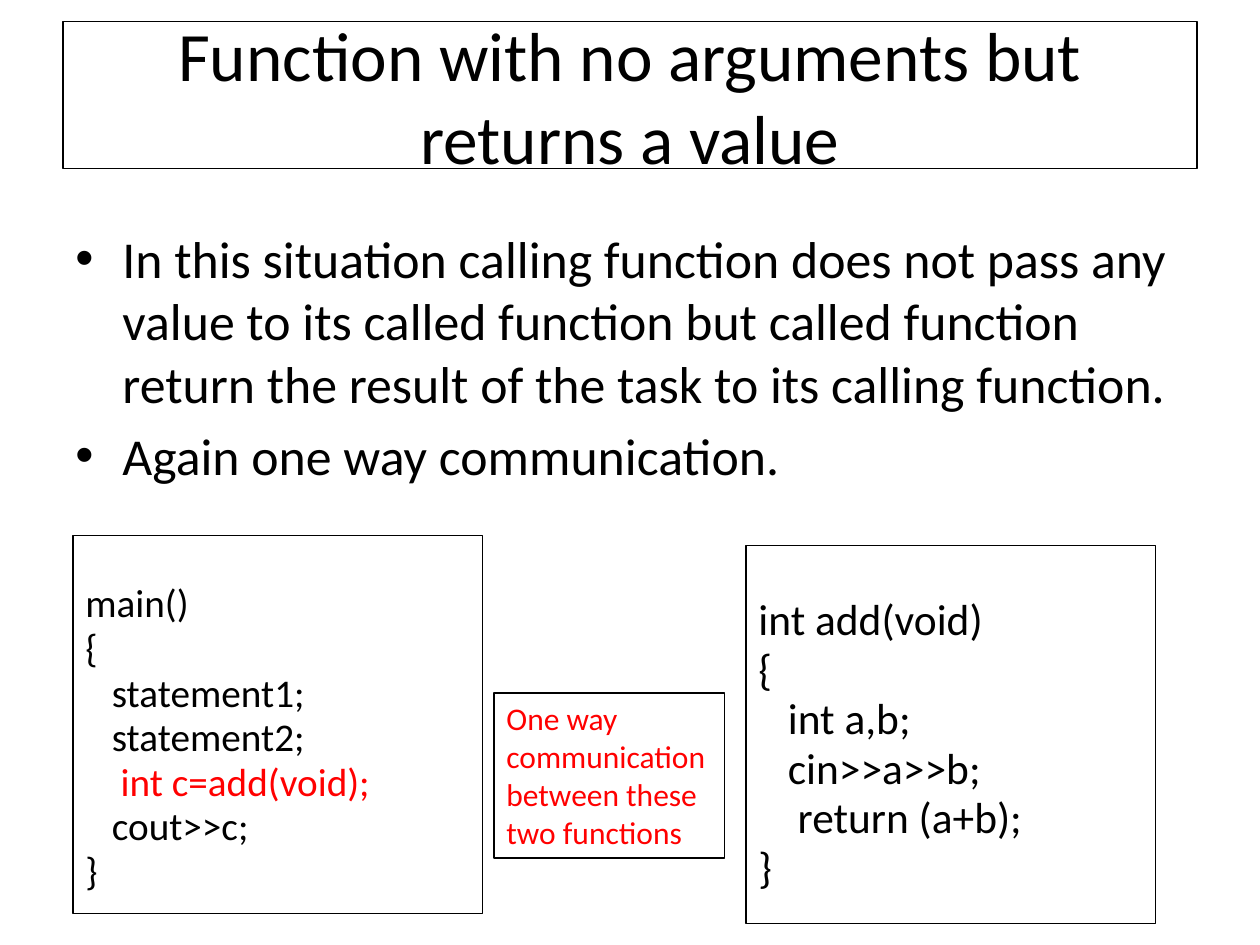
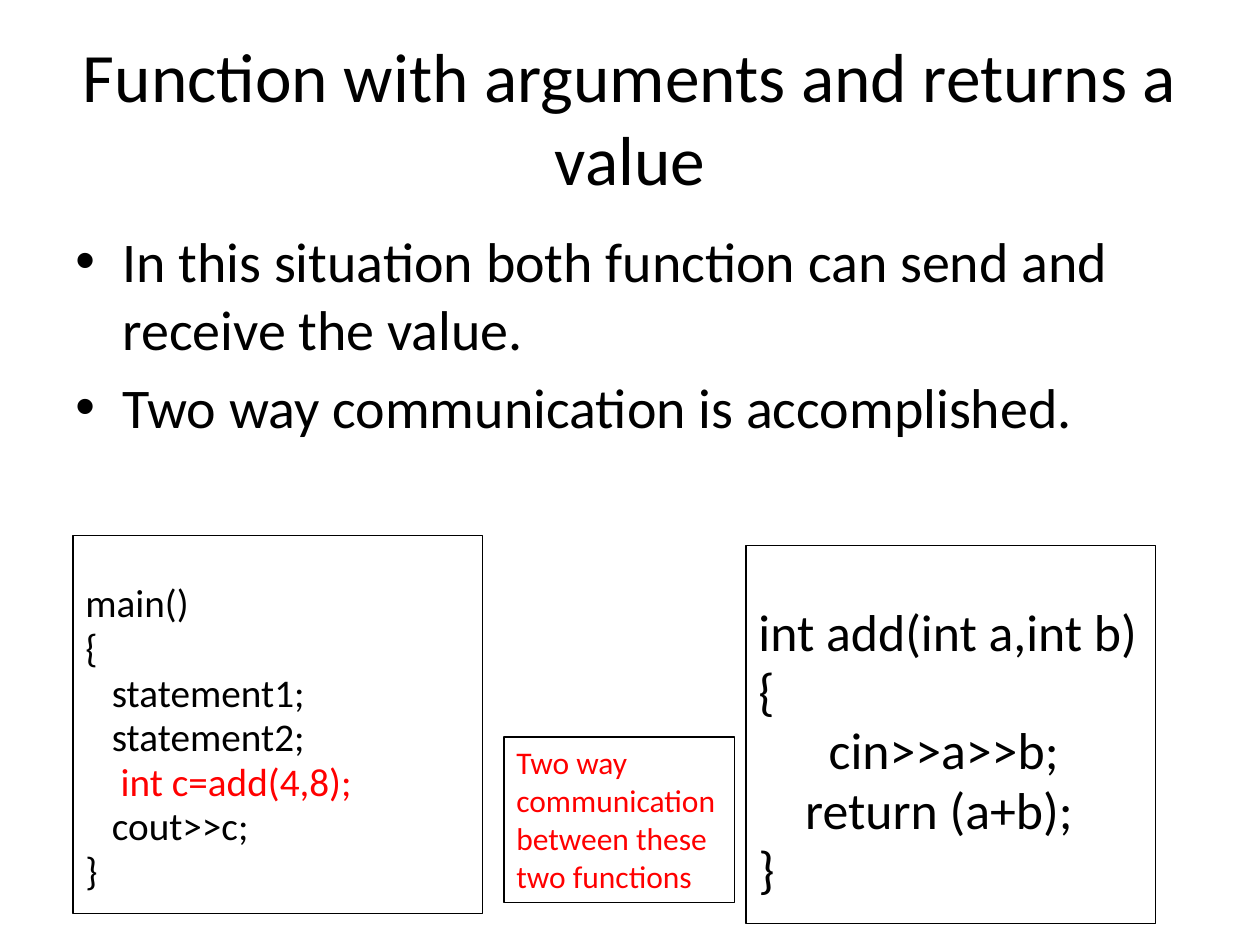
"""Builds two slides on how C++ functions pass arguments and return values."""
import pptx
import pptx.dml.color
import pptx.enum.shapes
import pptx.enum.text
import pptx.util
from lxml import etree

Cm, Pt = pptx.util.Cm, pptx.util.Pt
ALIGN, ANCHOR = pptx.enum.text.PP_ALIGN, pptx.enum.text.MSO_ANCHOR

BLACK, RED = "000000", "FF0000"
FONT = "Calibri"
TITLE_SIZE, MAIN_SIZE, NOTE_SIZE = 39.6, 22.4, 18
MARGIN, CONTENT_WIDTH = 1.27, 22.86
BODY_TOP, BULLET_INDENT = 4.45, 0.95
CODE_WIDTH, CODE_HEIGHT = 8.26, 7.62
MAIN_PLACE = (1.47, 10.8, CODE_WIDTH, CODE_HEIGHT)
ADD_PLACE = (15.04, 11, CODE_WIDTH, CODE_HEIGHT)
NOTE_WIDTH, NOTE_HEIGHT = 4.65, 3.33
CODE_SPACING, CODE_GAP, CODE_PITCH = 0.8, 0.18, 1.16
BULLET_GAP = 0.2

MAIN_START = ["main()", "{", "   statement1;", "   statement2;"]
MAIN_END = ["   cout>>c;", "}"]

LESSONS = [
    {
        "title": "Function with no arguments but returns a value",
        "title_top": 0.43, "title_height": 2.97, "title_framed": True,
        "points": [
            "In this situation calling function does not pass any value to its called "
            "function but called function return the result of the task to its calling function.",
            "Again one way communication.",
        ],
        "points_size": 29.6, "points_height": 6.15,
        "call": "    int c=add(void);",
        "add": ["int add(void)", "{", "   int a,b;", "   cin>>a>>b;", "    return (a+b);", "}"],
        "add_size": 24.8,
        "note": "One way communication between these two functions",
        "note_corner": (9.96, 13.97),
    },
    {
        "title": "Function with arguments and returns a value",
        "title_top": 0.76, "title_height": 3.18, "title_framed": False,
        "points": [
            "In this situation both function can send and receive the value.",
            "Two way communication is accomplished.",
        ],
        "points_size": 32, "points_height": 4.65,
        "call": "    int c=add(4,8);",
        "add": ["int add(int a,int b)", "{", "      cin>>a>>b;", "    return (a+b);", "}"],
        "add_size": 29.6,
        "note": "Two way communication between these two functions",
        "note_corner": (10.16, 14.86),
    },
]


def color(hex_value):
    """Turn a hex string into a colour."""
    return pptx.dml.color.RGBColor.from_string(hex_value)


def apply(target, formats):
    """Set every attribute named in formats on target."""
    for name, value in formats.items():
        setattr(target, name, value)


def add_bullet(paragraph):
    """Give a paragraph a hanging round bullet."""
    properties = paragraph._p.get_or_add_pPr()
    properties.set("marL", str(Cm(BULLET_INDENT)))
    properties.set("indent", str(-Cm(BULLET_INDENT)))
    namespace = properties.nsmap["a"]
    etree.SubElement(properties, f"{{{namespace}}}buFont", typeface="Arial")
    etree.SubElement(properties, f"{{{namespace}}}buChar", char="•")


def add_text(slide, place, lines, size, framed=True, bulleted=False, gap=0,
             frame_formats=None, paragraph_formats=None):
    """Add a block of (text, colour) lines, with or without a frame."""
    lengths = [Cm(length) for length in place]
    if framed:
        block = slide.shapes.add_shape(pptx.enum.shapes.MSO_SHAPE.RECTANGLE, *lengths)
        block.shadow.inherit = False
        block.fill.background()
        block.line.color.rgb = color(BLACK)
        block.line.width = Pt(0.75)
    else:
        block = slide.shapes.add_textbox(*lengths)
    frame = block.text_frame
    apply(frame, {"word_wrap": True, "vertical_anchor": ANCHOR.TOP, **(frame_formats or {})})
    for index, (text, shade) in enumerate(lines):
        paragraph = frame.add_paragraph() if index else frame.paragraphs[0]
        if bulleted:
            add_bullet(paragraph)
        apply(paragraph, {"alignment": ALIGN.LEFT, **(paragraph_formats or {})})
        if index and gap:
            paragraph.space_before = Pt(gap * size)
        run = paragraph.add_run()
        run.text = text
        apply(run.font, {"name": FONT, "size": Pt(size)})
        run.font.color.rgb = color(shade)


def add_code(slide, place, code, size, call=None):
    """Add a framed listing, one line down from its top, with the call in red."""
    lines = [(line, RED if line == call else BLACK) for line in code]
    add_text(slide, place, lines, size, gap=CODE_GAP,
             frame_formats={"margin_top": Cm(0.13) + Pt(CODE_PITCH * size)},
             paragraph_formats={"line_spacing": CODE_SPACING})


def add_lesson(deck, lesson):
    """Add the slide for one lesson."""
    slide = deck.slides.add_slide(deck.slide_layouts[6])
    add_text(slide, (MARGIN, lesson["title_top"], CONTENT_WIDTH, lesson["title_height"]),
             [(lesson["title"], BLACK)], TITLE_SIZE, framed=lesson["title_framed"],
             frame_formats={"vertical_anchor": ANCHOR.MIDDLE},
             paragraph_formats={"alignment": ALIGN.CENTER})
    add_text(slide, (MARGIN, BODY_TOP, CONTENT_WIDTH, lesson["points_height"]),
             [(point, BLACK) for point in lesson["points"]], lesson["points_size"],
             framed=False, bulleted=True, gap=BULLET_GAP)
    add_code(slide, MAIN_PLACE, [*MAIN_START, lesson["call"], *MAIN_END],
             MAIN_SIZE, lesson["call"])
    add_code(slide, ADD_PLACE, lesson["add"], lesson["add_size"])
    add_text(slide, (*lesson["note_corner"], NOTE_WIDTH, NOTE_HEIGHT),
             [(lesson["note"], RED)], NOTE_SIZE)


def main():
    """Build and save the deck."""
    deck = pptx.Presentation()
    apply(deck, {"slide_width": Cm(25.4), "slide_height": Cm(19.05)})
    for lesson in LESSONS:
        add_lesson(deck, lesson)
    deck.save("out.pptx")


if __name__ == "__main__":
    main()
